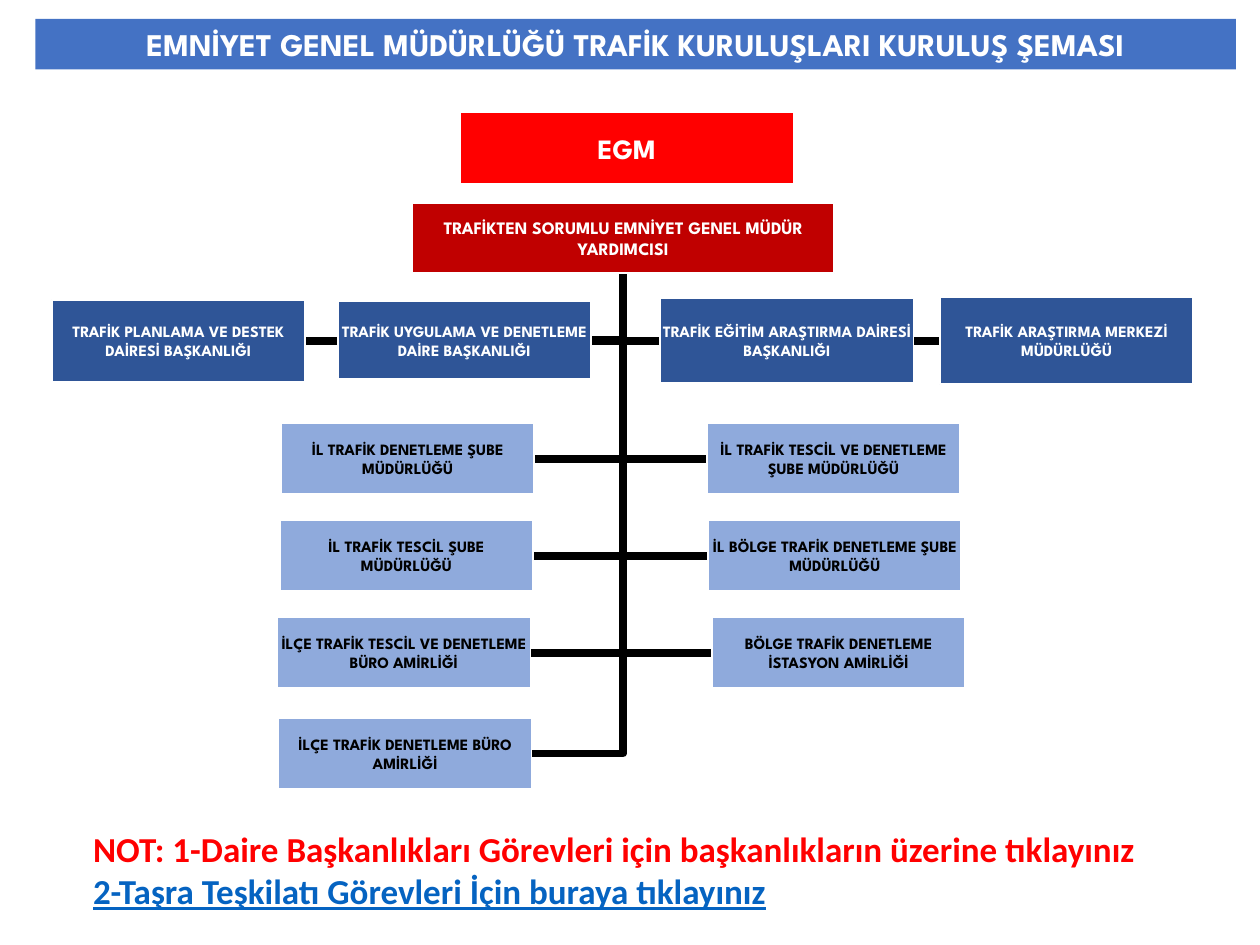
from pptx import Presentation
from pptx.dml.color import RGBColor
from pptx.enum import shapes, text
from pptx.util import Inches, Pt

WHITE = RGBColor(0xFF, 0xFF, 0xFF)
BLACK = RGBColor(0, 0, 0)
RED = RGBColor(0xFF, 0, 0)
DARK_RED = RGBColor(0xC0, 0, 0)
BLUE = RGBColor(0x44, 0x72, 0xC4)
NAVY = RGBColor(0x2F, 0x55, 0x97)
PALE_BLUE = RGBColor(0x8F, 0xAA, 0xDC)
LINK_BLUE = RGBColor(0x05, 0x63, 0xC1)

HEAD_FONT = "League Spartan"
UNIT_W = 2.01
BRANCH_H = 0.56

# left, top, height, name
DEPARTMENTS = [
    (0.41, 2.38, 0.65, "TRAFİK PLANLAMA VE DESTEK DAİRESİ BAŞKANLIĞI"),
    (2.68, 2.39, 0.62, "TRAFİK UYGULAMA VE DENETLEME DAİRE BAŞKANLIĞI"),
    (5.24, 2.37, 0.67, "TRAFİK EĞİTİM ARAŞTIRMA DAİRESİ BAŞKANLIĞI"),
    (7.46, 2.36, 0.69, "TRAFİK ARAŞTIRMA MERKEZİ MÜDÜRLÜĞÜ"),
]
# left, top, name
BRANCHES = [
    (2.23, 3.36, "İL TRAFİK DENETLEME ŞUBE MÜDÜRLÜĞÜ"),
    (5.61, 3.36, "İL TRAFİK TESCİL VE DENETLEME ŞUBE MÜDÜRLÜĞÜ"),
    (2.22, 4.13, "İL TRAFİK TESCİL ŞUBE MÜDÜRLÜĞÜ"),
    (5.62, 4.13, "İL BÖLGE TRAFİK DENETLEME ŞUBE MÜDÜRLÜĞÜ"),
    (2.2, 4.9, "İLÇE TRAFİK TESCİL VE DENETLEME BÜRO AMİRLİĞİ"),
    (5.65, 4.9, "BÖLGE TRAFİK DENETLEME İSTASYON AMİRLİĞİ"),
    (2.21, 5.7, "İLÇE TRAFİK DENETLEME BÜRO AMİRLİĞİ"),
]


def style(p, size, color, name=HEAD_FONT):
    p.font.size = Pt(size)
    p.font.bold = True
    p.font.name = name
    p.font.color.rgb = color


def add_title(slide, x, y, w, h):
    sp = slide.shapes.title
    sp.left, sp.top, sp.width, sp.height = map(Inches, (x, y, w, h))
    sp.fill.solid()
    sp.fill.fore_color.rgb = BLUE
    tf = sp.text_frame
    tf.text = "EMNİYET GENEL MÜDÜRLÜĞÜ TRAFİK KURULUŞLARI KURULUŞ ŞEMASI"
    tf.auto_size = text.MSO_AUTO_SIZE.NONE
    tf.vertical_anchor = text.MSO_ANCHOR.MIDDLE
    p = tf.paragraphs[0]
    p.alignment = text.PP_ALIGN.CENTER
    style(p, 18, WHITE)


def add_unit(slide, x, y, w, h, name, fill, size=9, color=WHITE):
    sp = slide.shapes.add_shape(
        shapes.MSO_SHAPE.RECTANGLE, *map(Inches, (x, y, w, h)))
    sp.shadow.inherit = False
    sp.fill.solid()
    sp.fill.fore_color.rgb = fill
    sp.line.color.rgb = WHITE
    sp.line.width = Pt(1)
    tf = sp.text_frame
    tf.word_wrap = True
    tf.vertical_anchor = text.MSO_ANCHOR.MIDDLE
    tf.margin_left = tf.margin_right = Inches(0.01)
    tf.margin_top = tf.margin_bottom = Inches(0.01)
    tf.text = name
    p = tf.paragraphs[0]
    p.alignment = text.PP_ALIGN.CENTER
    style(p, size, color)


def add_elbow(slide, trunk_x, trunk_y, x, y, w, h):
    """Run down the trunk, then across to the near side of the given box."""
    near_x = x if x > trunk_x else x + w
    mid_y = y + h / 2
    builder = slide.shapes.build_freeform(Inches(trunk_x), Inches(trunk_y))
    builder.add_line_segments(
        [(Inches(trunk_x), Inches(mid_y)), (Inches(near_x), Inches(mid_y))],
        close=False)
    sp = builder.convert_to_shape()
    sp.shadow.inherit = False
    sp.fill.background()
    sp.line.color.rgb = BLACK
    sp.line.width = Pt(4.5)


def add_chart(slide, x, y, w, h):
    """Two heads above a trunk, with units on either side of it."""
    trunk_x, trunk_y = x + w / 2, y + h
    units = [((left, top, UNIT_W, height), name, NAVY, WHITE)
             for left, top, height, name in DEPARTMENTS]
    units += [((left, top, UNIT_W, BRANCH_H), name, PALE_BLUE, BLACK)
              for left, top, name in BRANCHES]
    for box, *_ in units:
        add_elbow(slide, trunk_x, trunk_y, *box)
    add_unit(slide, x + 0.38, y - 0.72, 2.65, 0.57, "EGM", RED, 16)
    add_unit(slide, x, y, w, h,
             "TRAFİKTEN SORUMLU EMNİYET GENEL MÜDÜR YARDIMCISI", DARK_RED, 10)
    for box, name, fill, color in units:
        add_unit(slide, *box, name, fill, color=color)


def add_notes(slide, x, y, w, h):
    tf = slide.shapes.add_textbox(*map(Inches, (x, y, w, h))).text_frame
    tf.word_wrap = True
    note = tf.paragraphs[0]
    note.text = ("NOT: 1-Daire Başkanlıkları Görevleri için "
                 "başkanlıkların üzerine tıklayınız")
    style(note, 20, RED, "Calibri")
    link = tf.add_paragraph()
    link.text = "2-Taşra Teşkilatı Görevleri İçin buraya tıklayınız"
    style(link, 20, LINK_BLUE, "Calibri")
    link.font.underline = True


def main():
    prs = Presentation()
    prs.slide_width, prs.slide_height = Inches(10), Inches(7.5)
    slide = prs.slides.add_slide(prs.slide_layouts[5])
    add_title(slide, 0.28, 0.15, 9.53, 0.4)
    add_chart(slide, 3.27, 1.61, 3.35, 0.56)
    add_notes(slide, 0.64, 6.52, 9.53, 0.77)
    prs.save("out.pptx")


if __name__ == "__main__":
    main()
